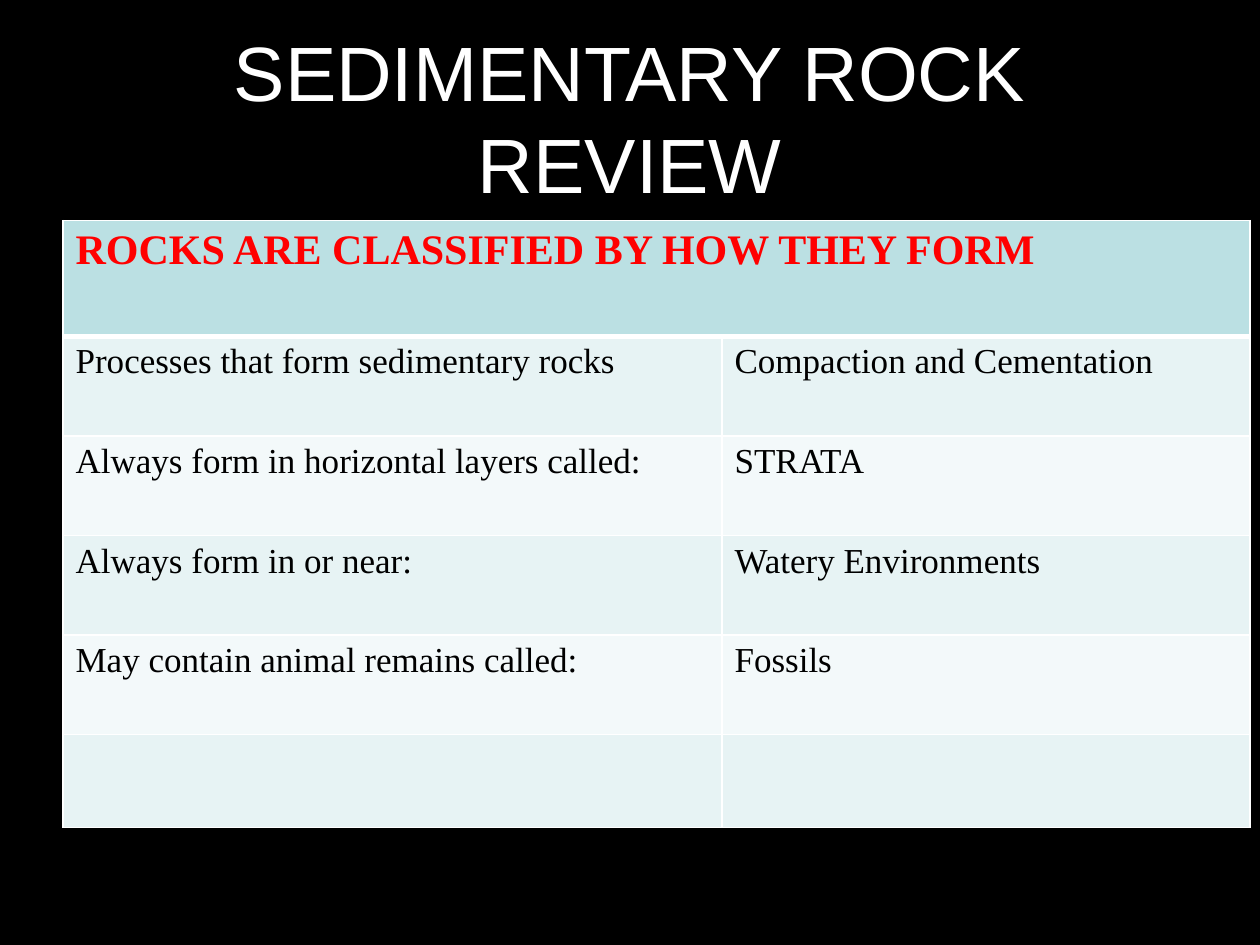
from typing import NamedTuple

from lxml.etree import SubElement
from pptx import Presentation
from pptx.dml.color import RGBColor
from pptx.enum.text import MSO_ANCHOR, PP_ALIGN
from pptx.oxml.ns import qn
from pptx.util import Inches, Pt


class Row(NamedTuple):
    texts: tuple[str, str]
    height: float
    fill: str


WHITE, BLACK, RED = "FFFFFF", "000000", "FF0000"
HEAD, DARK, LIGHT = "BBE0E3", "E7F3F4", "F3F9FA"
WIDTHS = (5.23, 4.19)
ROWS = (
    Row(("ROCKS ARE CLASSIFIED BY HOW THEY FORM", ""), 0.92, HEAD),
    Row(("Processes that form sedimentary rocks",
         "Compaction and Cementation"), 0.79, DARK),
    Row(("Always form in horizontal layers called:", "STRATA"), 0.79, LIGHT),
    Row(("Always form in or near:", "Watery Environments"), 0.79, DARK),
    Row(("May contain animal remains called:", "Fossils"), 0.79, LIGHT),
    Row(("", ""), 0.74, DARK),
)


def color(code: str) -> RGBColor:
    return RGBColor.from_string(code)


def write(frame, text: str, *, size: float, code: str,
          font: str = "Times New Roman", bold: bool = False,
          align=PP_ALIGN.LEFT) -> None:
    par = frame.paragraphs[0]
    par.alignment = align
    run = par.add_run()
    run.text = text
    run.font.name = font
    run.font.size = Pt(size)
    run.font.bold = bold
    run.font.color.rgb = color(code)


def edge(cell, base: float) -> None:
    """Give a cell white borders; base is the width of the bottom one."""
    props = cell._tc.get_or_add_tcPr()
    sides = {"a:lnL": 1, "a:lnR": 1, "a:lnT": 1, "a:lnB": base}
    for spot, (tag, width) in enumerate(sides.items()):
        line = SubElement(props, qn(tag), w=str(Pt(width)))
        fill = SubElement(line, qn("a:solidFill"))
        SubElement(fill, qn("a:srgbClr"), val=WHITE)
        props.insert(spot, line)  # borders come before the fill


def add_title(slide) -> None:
    box = slide.shapes.add_textbox(Inches(0.5), Inches(0.3),
                                   Inches(9), Inches(1.25))
    frame = box.text_frame
    frame.word_wrap = True
    frame.vertical_anchor = MSO_ANCHOR.MIDDLE
    write(frame, "SEDIMENTARY ROCK REVIEW", size=44, code=WHITE,
          font="Arial", align=PP_ALIGN.CENTER)


def add_review(slide) -> None:
    high = sum(row.height for row in ROWS)
    table = slide.shapes.add_table(
        len(ROWS), len(WIDTHS), Inches(0.5), Inches(1.75),
        Inches(sum(WIDTHS)), Inches(high)).table
    for col, width in zip(table.columns, WIDTHS):
        col.width = Inches(width)
    for r, row in enumerate(ROWS):
        top = r == 0
        table.rows[r].height = Inches(row.height)
        for c, text in enumerate(row.texts):
            cell = table.cell(r, c)
            cell.fill.solid()
            cell.fill.fore_color.rgb = color(row.fill)
            edge(cell, 3 if top else 1)
            if text:
                write(cell.text_frame, text, size=24 if top else 20,
                      code=RED if top else BLACK, bold=top)
    # The heading spans both columns
    table.cell(0, 0).merge(table.cell(0, 1))


def main() -> None:
    deck = Presentation()
    deck.slide_width, deck.slide_height = Inches(10), Inches(7.5)
    slide = deck.slides.add_slide(deck.slide_layouts[6])
    slide.background.fill.solid()
    slide.background.fill.fore_color.rgb = color(BLACK)
    add_title(slide)
    add_review(slide)
    deck.save("out.pptx")


if __name__ == "__main__":
    main()
